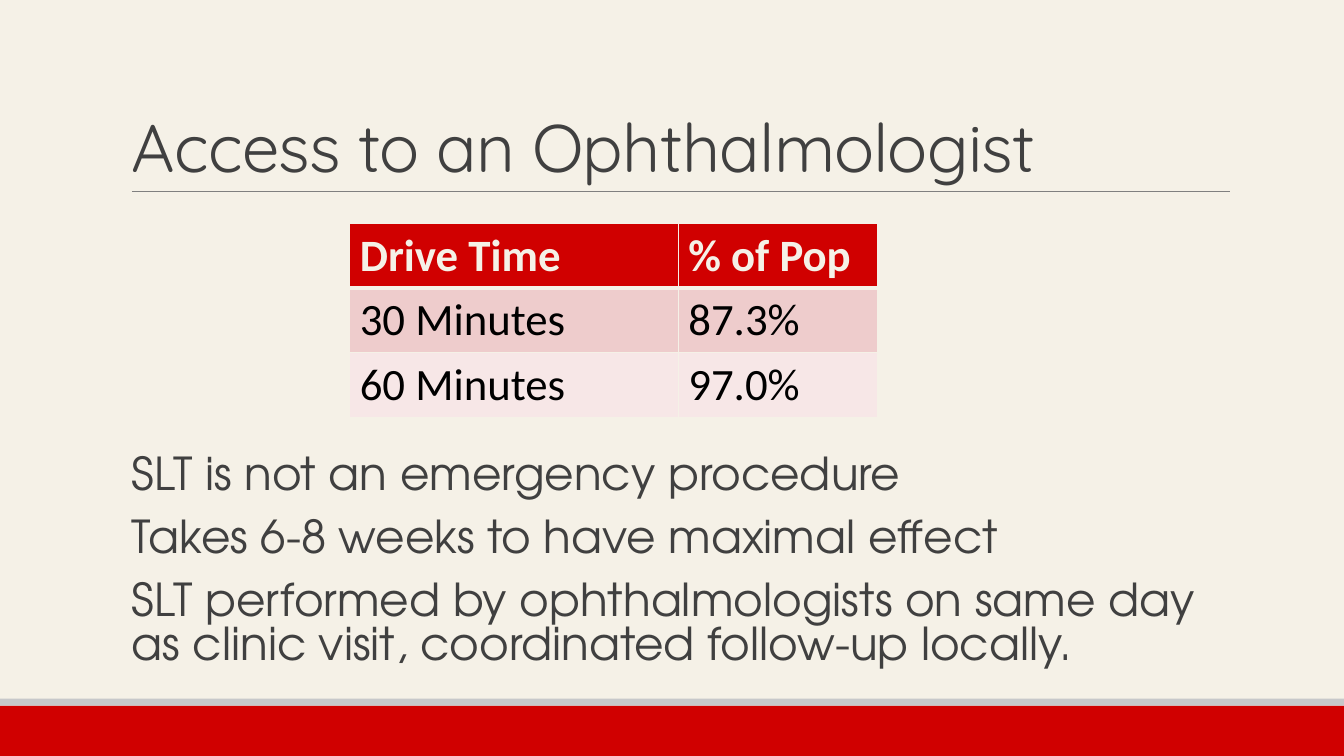
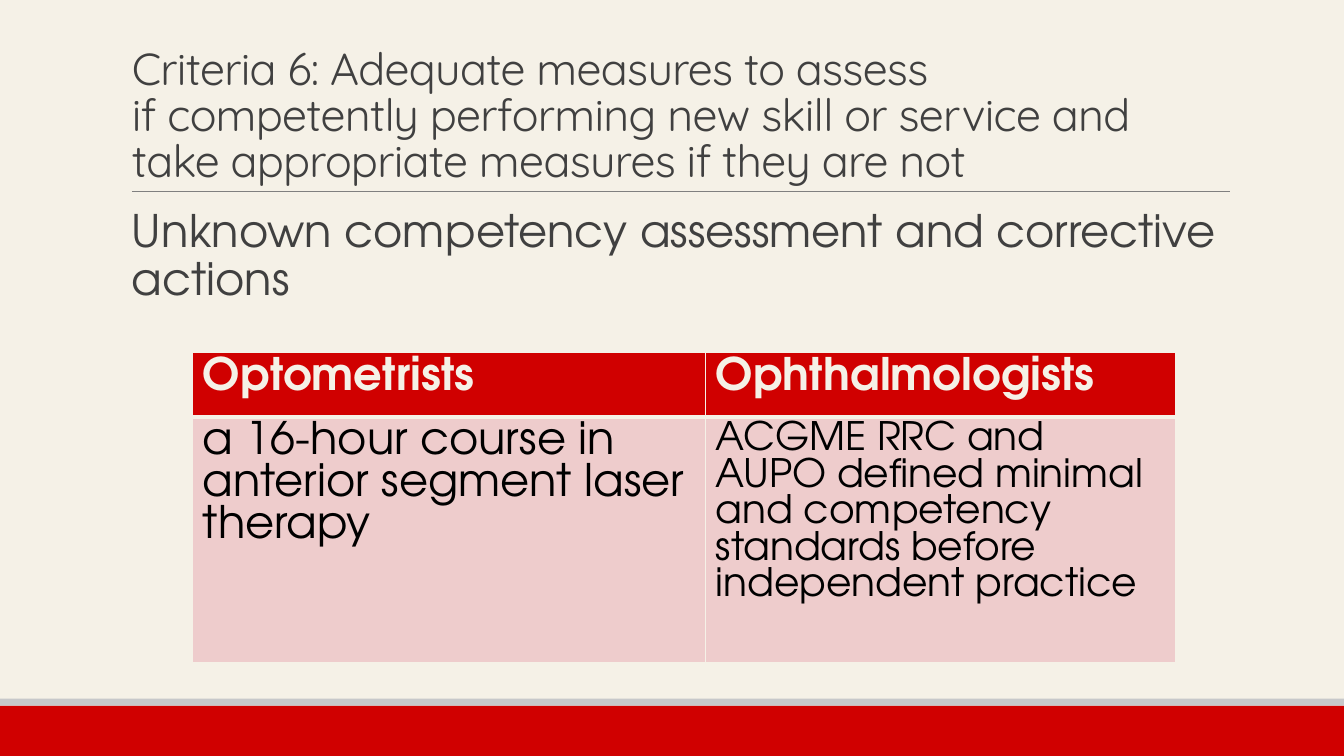
"""Build two slides on access to eye care and on skill assessment."""
from dataclasses import dataclass

from lxml.etree import SubElement as Sub
from pptx import Presentation as Deck
from pptx.dml.color import RGBColor as Rgb
from pptx.enum.shapes import MSO_CONNECTOR as Link, MSO_SHAPE as Form
from pptx.enum.text import MSO_ANCHOR as Anchor
from pptx.oxml.ns import qn
from pptx.util import Pt


@dataclass(frozen=True)
class Theme:
    """Hold the colours, fonts and type sizes."""
    paper: str = "F5F1E7"
    red: str = "D00000"
    grey: str = "C7C8CA"
    rule: str = "808080"
    ink: str = "404040"
    black: str = "000000"
    tints: tuple = ("EECCCC", "F7E7E7")
    head: str = "Quicksand"
    body: str = "TeX Gyre Adventor"
    plain: str = "Calibri"
    large: float = 48
    main: float = 32
    small: float = 28


class Show:
    """Draw styled elements on the current slide."""
    left = 94.2
    hang = 7.2

    def __init__(self, theme):
        """Start an empty deck."""
        self.theme = theme
        self.deck = Deck()
        self.deck.slide_width, self.deck.slide_height = Pt(960), Pt(540)
        self.slide = None

    def start(self, title, size):
        """Add a slide with its bands, rule and title."""
        look = self.theme
        self.slide = self.deck.slides.add_slide(self.deck.slide_layouts[6])
        fill = self.slide.background.fill
        fill.solid()
        fill.fore_color.rgb = Rgb.from_string(look.paper)
        self.band(504, 36, look.red)
        self.band(499, 5, look.grey)
        self.line(94.3, 878.6, 136.8)
        frame = self.text(self.left, 22.3, 777.6, 110.9, [title],
                          look.head, size, 0.85)
        frame.vertical_anchor = Anchor.BOTTOM
        for run in frame.paragraphs[0].runs:
            run.font._element.set("spc", "-50")

    def band(self, top, high, tone):
        """Draw a full-width band."""
        box = self.slide.shapes.add_shape(
            Form.RECTANGLE, 0, Pt(top), self.deck.slide_width, Pt(high))
        box.shadow.inherit = False
        box.fill.solid()
        box.fill.fore_color.rgb = Rgb.from_string(tone)
        box.line.fill.background()

    def line(self, start, end, top):
        """Draw a level rule."""
        rule = self.slide.shapes.add_connector(
            Link.STRAIGHT, Pt(start), Pt(top), Pt(end), Pt(top))
        rule.line.color.rgb = Rgb.from_string(self.theme.rule)
        rule.line.width = Pt(0.5)
        Sub(rule._element.spPr, qn("a:effectLst"))

    def text(self, left, top, wide, high, lines, face, size, pitch):
        """Add a text box with one paragraph per line."""
        box = self.slide.shapes.add_textbox(
            Pt(left), Pt(top), Pt(wide), Pt(high))
        frame = box.text_frame
        frame.word_wrap = True
        frame.margin_left = frame.margin_right = 0
        frame.margin_top = frame.margin_bottom = 0
        frame.text = "\n".join(lines)
        for rank, para in enumerate(frame.paragraphs):
            para.line_spacing = pitch
            para.space_before = Pt(12 if rank else 0)
            para.space_after = Pt(2)
            self.style(para, face, size, self.theme.ink)
        return frame

    def points(self, top, high, lines, size, pitch):
        """Add body text with hanging blank bullets."""
        frame = self.text(self.left - self.hang, top, 792, high, lines,
                          self.theme.body, size, pitch)
        for para in frame.paragraphs:
            props = para._p.get_or_add_pPr()
            props.set("marL", str(Pt(self.hang)))
            props.set("indent", str(-Pt(self.hang)))
            tone = Sub(props, qn("a:buClr"))
            Sub(tone, qn("a:srgbClr"), val=self.theme.grey)
            Sub(props, qn("a:buFont"), typeface=self.theme.plain)
            Sub(props, qn("a:buChar"), char=" ")

    def style(self, para, face, size, tone, bold=False):
        """Format the runs of a paragraph."""
        for run in para.runs:
            font = run.font
            font.name, font.size, font.bold = face, Pt(size), bold
            font.color.rgb = Rgb.from_string(tone)

    def table(self, left, top, cols, highs, rows, face, sizes=None):
        """Add a table with a red head and tinted rows."""
        look = self.theme
        grid = self.slide.shapes.add_table(
            len(rows), len(cols), Pt(left), Pt(top),
            Pt(sum(cols)), Pt(sum(highs))).table
        for col, wide in zip(grid.columns, cols):
            col.width = Pt(wide)
        for r, (row, high) in enumerate(zip(rows, highs)):
            grid.rows[r].height = Pt(high)
            for c, words in enumerate(row):
                cell = grid.cell(r, c)
                cell.text_frame.text = words
                size = sizes[c] if r and sizes else look.main
                tone = look.black if r else look.paper
                self.style(cell.text_frame.paragraphs[0],
                           face, size, tone, r == 0)
                self.edge(cell, 3 if r == 1 else 1, 1 if r else 3)
                cell.fill.solid()
                cell.fill.fore_color.rgb = Rgb.from_string(
                    look.tints[(r - 1) % 2] if r else look.red)

    def edge(self, cell, over, under):
        """Set the four borders of a cell."""
        props = cell._tc.get_or_add_tcPr()
        for side, wide in zip("LRTB", (1, 1, over, under)):
            line = Sub(props, qn("a:ln" + side), w=str(Pt(wide)))
            fill = Sub(line, qn("a:solidFill"))
            Sub(fill, qn("a:srgbClr"), val=self.theme.paper)


def main():
    """Build and save both slides."""
    look = Theme()
    show = Show(look)

    show.start("Access to an Ophthalmologist", look.large)
    show.table(249.8, 159.8, (234.7, 142.6), (46.1,) * 3, (
        ("Drive Time", "% of Pop"),
        ("30 Minutes", "87.3%"),
        ("60 Minutes", "97.0%"),
    ), look.plain)
    show.points(325.6, 160, (
        "SLT is not an emergency procedure",
        "Takes 6-8 weeks to have maximal effect",
        "SLT performed by ophthalmologists on same day as clinic visit, "
        "coordinated follow-up locally.",
    ), 32.4, 0.8)

    show.start(
        "Criteria 6: Adequate measures to assess\vif competently performing "
        "new skill or service and take appropriate measures if they are not",
        look.main)
    show.points(149, 80, (
        "Unknown competency assessment and corrective actions",
    ), look.main, 0.9)
    show.table(137.7, 252, (366.3, 335.5), (36.4, 136.5), (
        ("Optometrists", "Ophthalmologists"),
        ("a 16-hour course in anterior segment laser therapy",
         "ACGME RRC and AUPO defined minimal and competency standards "
         "before independent practice"),
    ), look.body, (look.main, look.small))

    show.deck.save("out.pptx")


if __name__ == "__main__":
    main()
